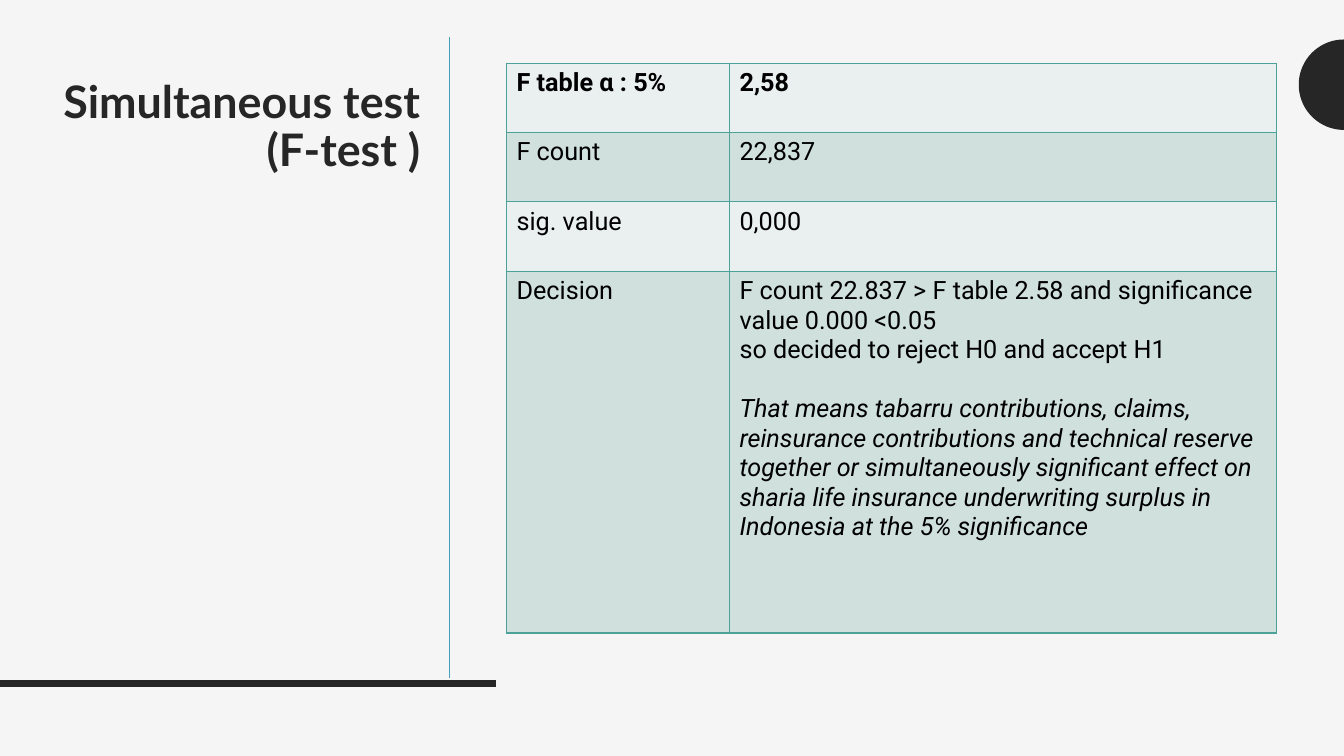
from dataclasses import dataclass
from math import cos, pi, sin

from lxml.etree import SubElement
from pptx import Presentation
from pptx.dml.color import RGBColor
from pptx.enum.shapes import MSO_CONNECTOR as Conn
from pptx.enum.text import MSO_ANCHOR as Anchor, MSO_AUTO_SIZE as AutoSize, PP_ALIGN as Align
from pptx.oxml.ns import qn
from pptx.slide import Slide
from pptx.table import _Cell as Cell
from pptx.text.text import _Paragraph as Paragraph
from pptx.util import Pt


@dataclass(frozen=True)
class Theme:
    background: str = "F5F5F5"
    dark: str = "262626"
    text: str = "000000"
    divider: str = "439EB7"
    border: str = "4CA198"
    bands: tuple[str, str] = ("E9F0EF", "D0E0DD")
    title_font: str = "Lato"
    body_font: str = "Roboto"
    title_size: float = 32
    body_size: float = 18


@dataclass(frozen=True)
class Rule:
    x1: float
    y1: float
    x2: float
    y2: float
    color: str
    weight: float


@dataclass(frozen=True)
class Para:
    text: str
    bold: bool = False
    italic: bool = False
    space_before: float = 0


@dataclass(frozen=True)
class Row:
    height: float
    label: Para
    values: tuple[Para, ...]


THEME = Theme()
WIDTH, HEIGHT = 960, 540
COLUMNS = (159.3, 391)

RULES = (
    Rule(0, 488.2, 354.2, 488.2, THEME.dark, 4.5),
    Rule(321, 26.6, 321, 484.6, THEME.divider, 0.5),
)

ROWS = (
    Row(49.5, Para("F table α : 5%", bold=True), (Para("2,58", bold=True),)),
    Row(49.5, Para("F count"), (Para("22,837"),)),
    Row(49.5, Para("sig. value"), (Para("0,000"),)),
    Row(258.5, Para("Decision"), (
        Para("F count 22.837 > F table 2.58 and significance value 0.000 <0.05"),
        Para("so decided to reject H0 and accept H1"),
        Para("That means tabarru contributions, claims, reinsurance contributions "
             "and technical reserve together or simultaneously significant effect on "
             "sharia life insurance underwriting surplus in Indonesia at the 5% "
             "significance", italic=True, space_before=21),
    )),
)


def rgb(color: str) -> RGBColor:
    return RGBColor.from_string(color)


def style(p: Paragraph, font: str, size: float, color: str, bold: bool, italic: bool = False) -> None:
    f = p.font
    f.name, f.size, f.bold, f.italic = font, Pt(size), bold, italic
    f.color.rgb = rgb(color)


def add_rule(s: Slide, rule: Rule) -> None:
    line = s.shapes.add_connector(Conn.STRAIGHT, Pt(rule.x1), Pt(rule.y1), Pt(rule.x2), Pt(rule.y2))
    line.line.color.rgb = rgb(rule.color)
    line.line.width = Pt(rule.weight)
    SubElement(line._element.spPr, qn("a:effectLst"))


def add_edge_half_disc(s: Slide, cy: float, radius: float, steps: int = 48) -> None:
    """Draw the left half of a disc centred on the slide's right edge."""
    angles = [pi / 2 + pi * i / steps for i in range(steps + 1)]
    points = [(Pt(WIDTH + radius * cos(a)), Pt(cy + radius * sin(a))) for a in angles]
    builder = s.shapes.build_freeform(*points[0])
    builder.add_line_segments(points[1:], close=True)
    sp = builder.convert_to_shape()
    sp.shadow.inherit = False
    sp.fill.solid()
    sp.fill.fore_color.rgb = rgb(THEME.dark)
    sp.line.fill.background()


def set_title(s: Slide, text: str) -> None:
    sp = s.shapes.title
    sp.left, sp.top, sp.width, sp.height = Pt(5.8), Pt(53.3), Pt(301.7), Pt(390.2)
    tf = sp.text_frame
    tf.word_wrap, tf.auto_size, tf.vertical_anchor = True, AutoSize.NONE, Anchor.TOP
    tf.text = text
    p = tf.paragraphs[0]
    p.alignment, p.line_spacing = Align.RIGHT, 0.9
    style(p, THEME.title_font, THEME.title_size, THEME.dark, bold=True)


def set_borders(cell: Cell, color: str, weight: float) -> None:
    props = cell._tc.get_or_add_tcPr()
    for i, side in enumerate(("lnL", "lnR", "lnT", "lnB")):
        ln = SubElement(props, qn(f"a:{side}"), w=str(Pt(weight)))
        SubElement(SubElement(ln, qn("a:solidFill")), qn("a:srgbClr"), val=color)
        props.insert(i, ln)


def fill_cell(cell: Cell, paras: tuple[Para, ...], band: str) -> None:
    cell.fill.solid()
    cell.fill.fore_color.rgb = rgb(band)
    set_borders(cell, THEME.border, 1)
    tf = cell.text_frame
    for i, para in enumerate(paras):
        p = tf.add_paragraph() if i else tf.paragraphs[0]
        p.text = para.text
        p.space_before = Pt(para.space_before)
        style(p, THEME.body_font, THEME.body_size, THEME.text, para.bold, para.italic)


def add_results_table(s: Slide) -> None:
    height = sum(row.height for row in ROWS)
    table = s.shapes.add_table(len(ROWS), len(COLUMNS), Pt(361.8), Pt(45.2),
                               Pt(sum(COLUMNS)), Pt(height)).table
    table.first_row = table.horz_banding = False
    for column, width in zip(table.columns, COLUMNS):
        column.width = Pt(width)
    for i, row in enumerate(ROWS):
        table.rows[i].height = Pt(row.height)
        for j, paras in enumerate(((row.label,), row.values)):
            fill_cell(table.cell(i, j), paras, THEME.bands[i % 2])


def main() -> None:
    prs = Presentation()
    prs.slide_width, prs.slide_height = Pt(WIDTH), Pt(HEIGHT)
    s = prs.slides.add_slide(prs.slide_layouts.get_by_name("Title Only"))
    s.background.fill.solid()
    s.background.fill.fore_color.rgb = rgb(THEME.background)
    add_edge_half_disc(s, cy=60.5, radius=32.3)
    for rule in RULES:
        add_rule(s, rule)
    set_title(s, "Simultaneous test (F-test )")
    add_results_table(s)
    prs.save("out.pptx")


if __name__ == "__main__":
    main()
